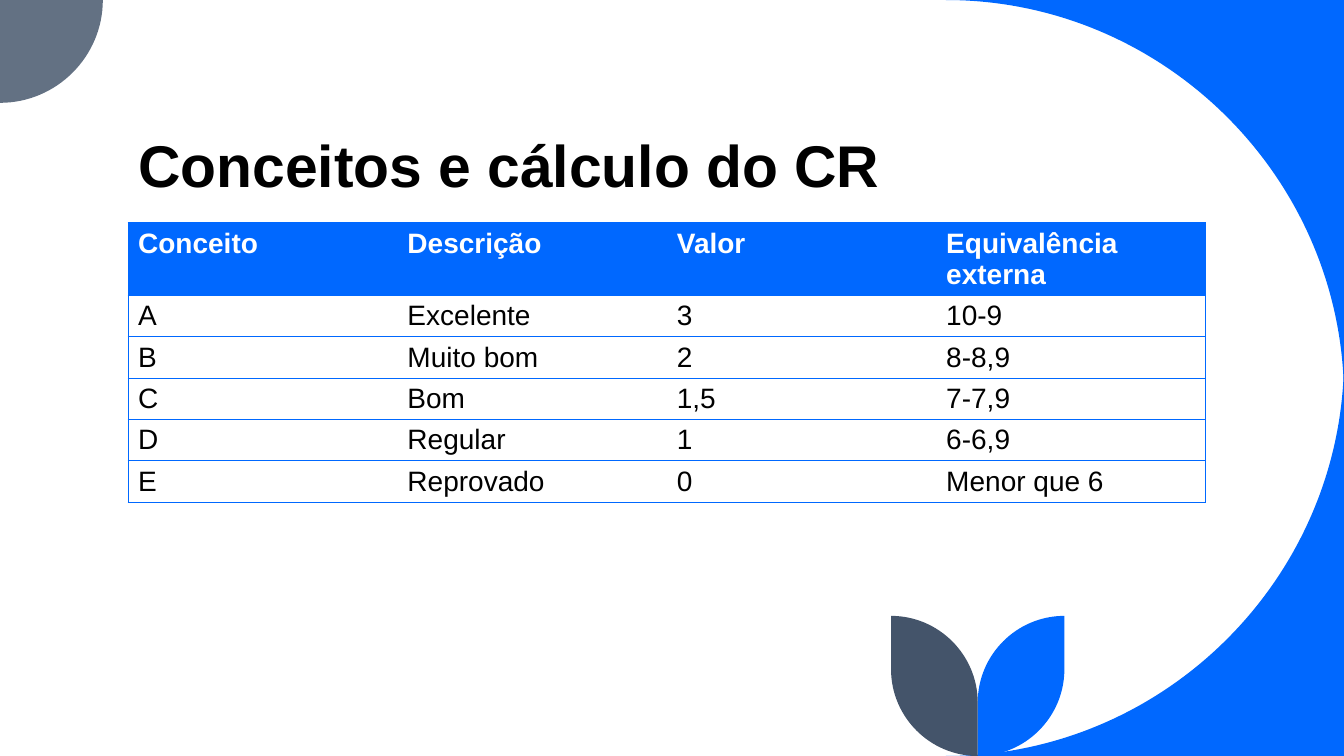
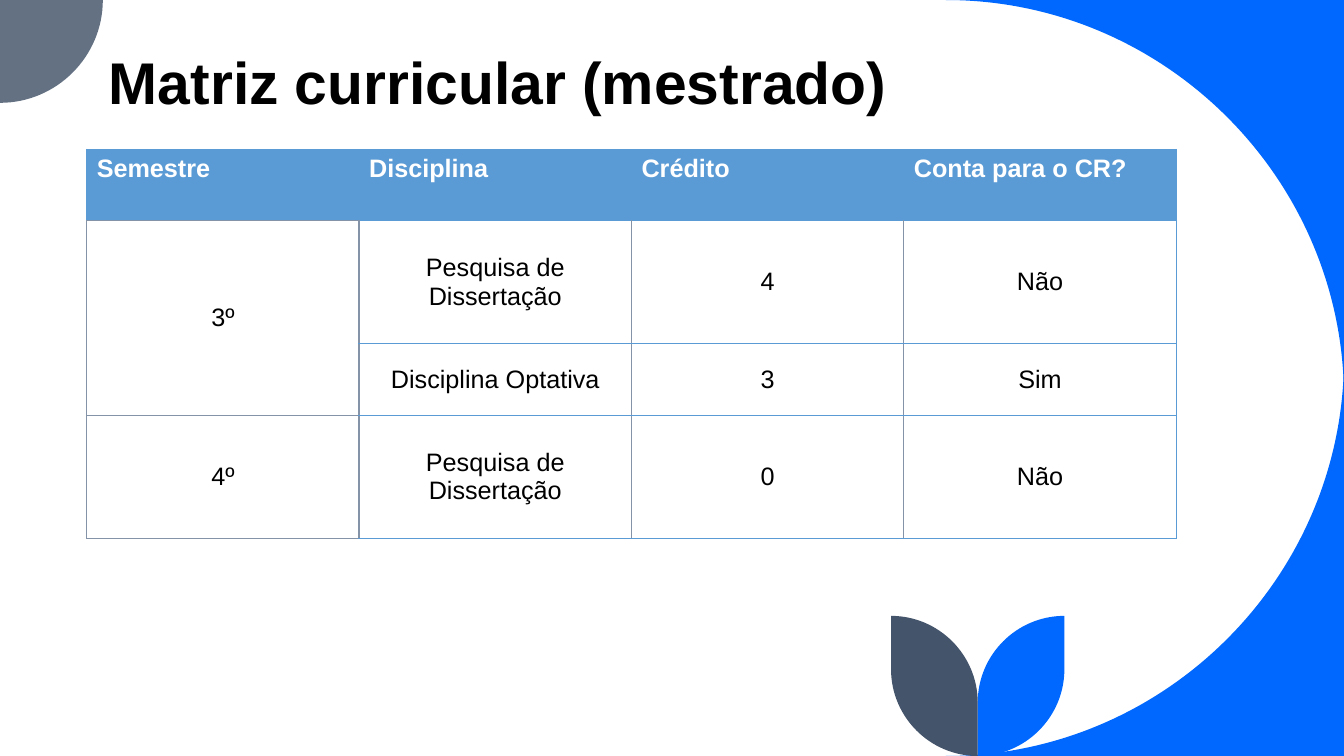
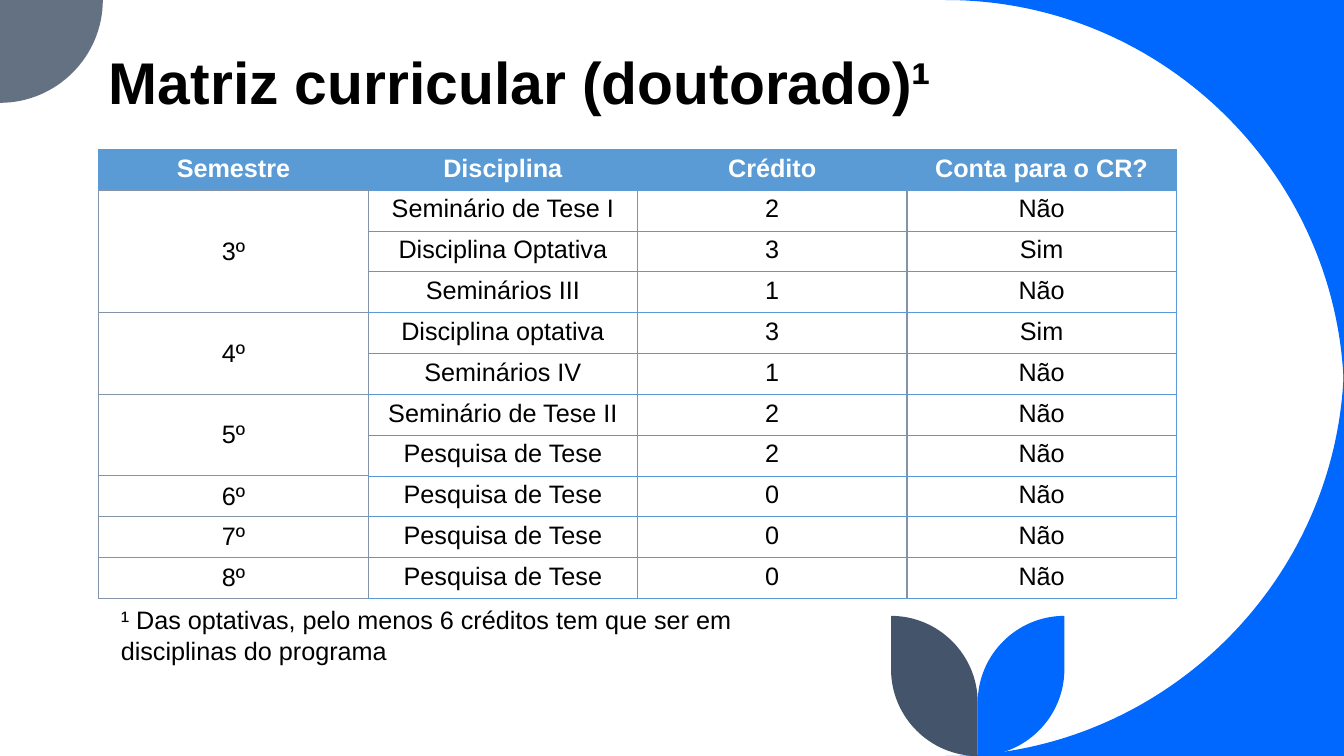
import pptx
import pptx.dml.color
import pptx.enum.text
import pptx.oxml
import pptx.oxml.ns
import pptx.util
from lxml import etree

RGB = pptx.dml.color.RGBColor
ALIGN = pptx.enum.text.PP_ALIGN
ANCHOR = pptx.enum.text.MSO_ANCHOR
Inches = pptx.util.Inches
qn = pptx.oxml.ns.qn

BLUE = RGB(0x00, 0x68, 0xFF)
SKY = RGB(0x5B, 0x9B, 0xD5)
SLATE = RGB(0x63, 0x71, 0x83)
NAVY = RGB(0x44, 0x54, 0x6A)
GREY = RGB(0x85, 0x93, 0xA8)
BLACK = RGB(0, 0, 0)
WHITE = RGB(0xFF, 0xFF, 0xFF)

FONT = "Arial"
WIDTH, HEIGHT = 40 / 3, 7.5
TITLE_ONLY = 5
ROW = 4.46 / 11
PLAIN_TABLE = "{2D5ABB26-0587-4C30-8999-92F81FD0307C}"

CONCEPTS = [
    ["Conceito", "Descrição", "Valor", "Equivalência externa"],
    ["A", "Excelente", "3", "10-9"],
    ["B", "Muito bom", "2", "8-8,9"],
    ["C", "Bom", "1,5", "7-7,9"],
    ["D", "Regular", "1", "6-6,9"],
    ["E", "Reprovado", "0", "Menor que 6"],
]
COURSE_HEADER = ["Semestre", "Disciplina", "Crédito", "Conta para o CR?"]
# An empty first entry continues the semester above it.
MASTERS = [
    COURSE_HEADER,
    ["3º", "Pesquisa de Dissertação", "4", "Não"],
    ["", "Disciplina Optativa", "3", "Sim"],
    ["4º", "Pesquisa de Dissertação", "0", "Não"],
]
DOCTORATE = [
    COURSE_HEADER,
    ["3º", "Seminário de Tese I", "2", "Não"],
    ["", "Disciplina Optativa", "3", "Sim"],
    ["", "Seminários III", "1", "Não"],
    ["4º", "Disciplina optativa", "3", "Sim"],
    ["", "Seminários IV", "1", "Não"],
    ["5º", "Seminário de Tese II", "2", "Não"],
    ["", "Pesquisa de Tese", "2", "Não"],
    ["6º", "Pesquisa de Tese", "0", "Não"],
    ["7º", "Pesquisa de Tese", "0", "Não"],
    ["8º", "Pesquisa de Tese", "0", "Não"],
]


def write(frame, text, size=18, color=BLACK, bold=False, align=ALIGN.LEFT, spacing=None):
    para = frame.paragraphs[0]
    para.alignment = align
    if spacing:
        para.line_spacing = spacing
    span = para.add_run()
    span.text = text
    span.font.name = FONT
    span.font.size = pptx.util.Pt(size)
    span.font.bold = bold
    span.font.color.rgb = color


def quarter(start, corner, end):
    """Bezier points of a quarter circle that bulges towards a corner."""
    pull = 0.55
    controls = [tuple(a + pull * (b - a) for a, b in zip(point, corner)) for point in (start, end)]
    return [*controls, end]


def draw_outline(page, start, parts, color):
    """Close an outline of parts: one point is a line, three are a curve."""
    points = [point for part in parts for point in part]
    points = [(Inches(x), Inches(y)) for x, y in points]
    builder = page.shapes.build_freeform(*map(Inches, start), scale=1.0)
    builder.add_line_segments(points, close=True)
    shape = builder.convert_to_shape()
    lines = iter(list(shape.element.iter(qn("a:lnTo"))))
    for part in parts:
        first, *others = [next(lines) for _ in part]
        if others:
            curve = etree.Element(qn("a:cubicBezTo"))
            first.addprevious(curve)
            for line in (first, *others):
                curve.append(line[0])
                line.getparent().remove(line)
    shape.shadow.inherit = False
    shape.fill.solid()
    shape.fill.fore_color.rgb = color
    shape.line.fill.background()
    return shape


def draw_corner(page, corner, across, down, bulge, color):
    """Fill from a corner to the quarter circle between two points."""
    return draw_outline(page, corner, [[across], quarter(across, bulge, down)], color)


def draw_leaf(page, side, color):
    stem, width, top = 9.7, 0.86, 6.11
    outer = stem + side * width
    tip, foot = (outer, top), (stem, HEIGHT)
    shoulder, inner = (outer, HEIGHT - width), (stem, top + width)
    parts = [[shoulder], quarter(shoulder, (outer, HEIGHT), foot),
             [inner], quarter(inner, (stem, top), tip)]
    return draw_outline(page, tip, parts, color)


def draw_backdrop(page):
    """Corner curves, quarter disc and the pair of leaves."""
    radius, disc = 3.95, 1.02
    left, low = WIDTH - radius, HEIGHT - radius
    top_right, bottom_right = (WIDTH, 0), (WIDTH, HEIGHT)
    return [
        draw_corner(page, top_right, (left, 0), (WIDTH, radius), top_right, BLUE),
        draw_corner(page, bottom_right, (WIDTH, low), (left, HEIGHT), bottom_right, BLUE),
        draw_corner(page, (0, 0), (disc, 0), (0, disc), (disc, disc), SLATE),
        draw_leaf(page, 1, BLUE),
        draw_leaf(page, -1, NAVY),
    ]


def share_backdrop(page):
    """Draw the backdrop and move it to the layout, behind its title."""
    layout = page.slide_layout
    tree = layout.shapes.element
    for holder in list(layout.placeholders):
        if holder.placeholder_format.idx != 0:
            tree.remove(holder.element)
    for number, shape in enumerate(draw_backdrop(page)):
        shape.element.nvSpPr.cNvPr.set("id", str(100 + number))
        tree.insert(2 + number, shape.element)


def place_title(page, text, box):
    title = page.shapes.title
    title.left, title.top, title.width, title.height = map(Inches, box)
    frame = title.text_frame
    frame.word_wrap = True
    frame.auto_size = pptx.enum.text.MSO_AUTO_SIZE.NONE
    frame.vertical_anchor = ANCHOR.BOTTOM
    write(frame, text, size=42, bold=True, spacing=0.8)


def set_edges(cell, edges):
    """Draw the listed sides, each a (colour, points) line."""
    properties = cell._tc.get_or_add_tcPr()
    for side in "LRTB":
        if side in edges:
            color, points = edges[side]
            line = etree.SubElement(properties, qn(f"a:ln{side}"), w=str(pptx.util.Pt(points)))
            fill = etree.SubElement(line, qn("a:solidFill"))
            etree.SubElement(fill, qn("a:srgbClr"), val=str(color))


def cell_edges(row, column, last_column, accent, grouped):
    thin, strong = (accent, 0.5), (GREY, 1)
    if grouped and column == 0 and row > 0:
        return dict.fromkeys("LRTB", strong)
    edges = {"T": thin, "B": thin}
    if column == 0:
        edges["L"] = thin
    if column == last_column:
        edges["R"] = thin
    if grouped and row == 0 and column == 0:
        edges["B"] = strong
    if grouped and row > 0:
        if column <= 2:
            edges["L"] = strong
        if column == 1:
            edges["R"] = strong
    return edges


def merge_groups(table, rows):
    starts = [index for index, row in enumerate(rows) if row[0]] + [len(rows)]
    for start, end in zip(starts, starts[1:]):
        if end - start > 1:
            table.cell(start, 0).merge(table.cell(end - 1, 0))


def place_table(page, rows, box, heights, accent, size=18, grouped=False,
                header_align=ALIGN.LEFT, body_align=ALIGN.LEFT, middle_columns=()):
    columns = len(rows[0])
    holder = page.shapes.add_table(len(rows), columns, *map(Inches, box))
    table = holder.table
    table.horz_banding = False
    next(holder.element.iter(qn("a:tableStyleId"))).text = PLAIN_TABLE
    for line, height in zip(table.rows, heights):
        line.height = Inches(height)
    holder.height = Inches(box[3])
    for r, row in enumerate(rows):
        for c, text in enumerate(row):
            cell = table.cell(r, c)
            set_edges(cell, cell_edges(r, c, columns - 1, accent, grouped))
            if r == 0:
                cell.fill.solid()
                cell.fill.fore_color.rgb = accent
            else:
                cell.fill.background()
                if c in middle_columns:
                    cell.vertical_anchor = ANCHOR.MIDDLE
            if text:
                write(cell.text_frame, text, size=size, bold=r == 0,
                      color=WHITE if r == 0 else BLACK,
                      align=header_align if r == 0 else body_align)
    merge_groups(table, rows)


def place_note(page, text, box):
    note = page.shapes.add_textbox(*map(Inches, box))
    note.text_frame.word_wrap = True
    note.text_frame.auto_size = pptx.enum.text.MSO_AUTO_SIZE.SHAPE_TO_FIT_TEXT
    write(note.text_frame, text)


def build_concepts(page):
    left, width = 1.27, 10.69
    place_title(page, "Conceitos e cálculo do CR", (left, 0.11, width, 1.91))
    place_table(page, CONCEPTS, (left, 2.21, width, 2.93), [ROW] * len(CONCEPTS), BLUE, size=20)


def build_courses(page, title, rows, left, heights, **options):
    right = 11.67
    place_title(page, title, (0.98, 0.49, 10.69, 0.71))
    place_table(page, rows, (left, 1.48, right - left, sum(heights)), heights, SKY,
                grouped=True, body_align=ALIGN.CENTER, **options)


def main():
    deck = pptx.Presentation()
    deck.slide_width, deck.slide_height = Inches(WIDTH), Inches(HEIGHT)
    layout = deck.slide_layouts[TITLE_ONLY]
    concepts, masters, doctorate = [deck.slides.add_slide(layout) for _ in range(3)]
    share_backdrop(concepts)

    build_concepts(concepts)
    build_courses(masters, "Matriz curricular (mestrado)", MASTERS, 0.86,
                  [0.71, 1.22, 0.71, 1.22], middle_columns=range(4))
    build_courses(doctorate, "Matriz curricular (doutorado)¹", DOCTORATE, 0.98,
                  [ROW] * len(DOCTORATE), header_align=ALIGN.CENTER, middle_columns=(0,))
    place_note(doctorate, "¹ Das optativas, pelo menos 6 créditos tem que ser em "
               "disciplinas do programa", (1.1, 5.95, 6.7, 0.71))
    deck.save("out.pptx")


if __name__ == "__main__":
    main()
